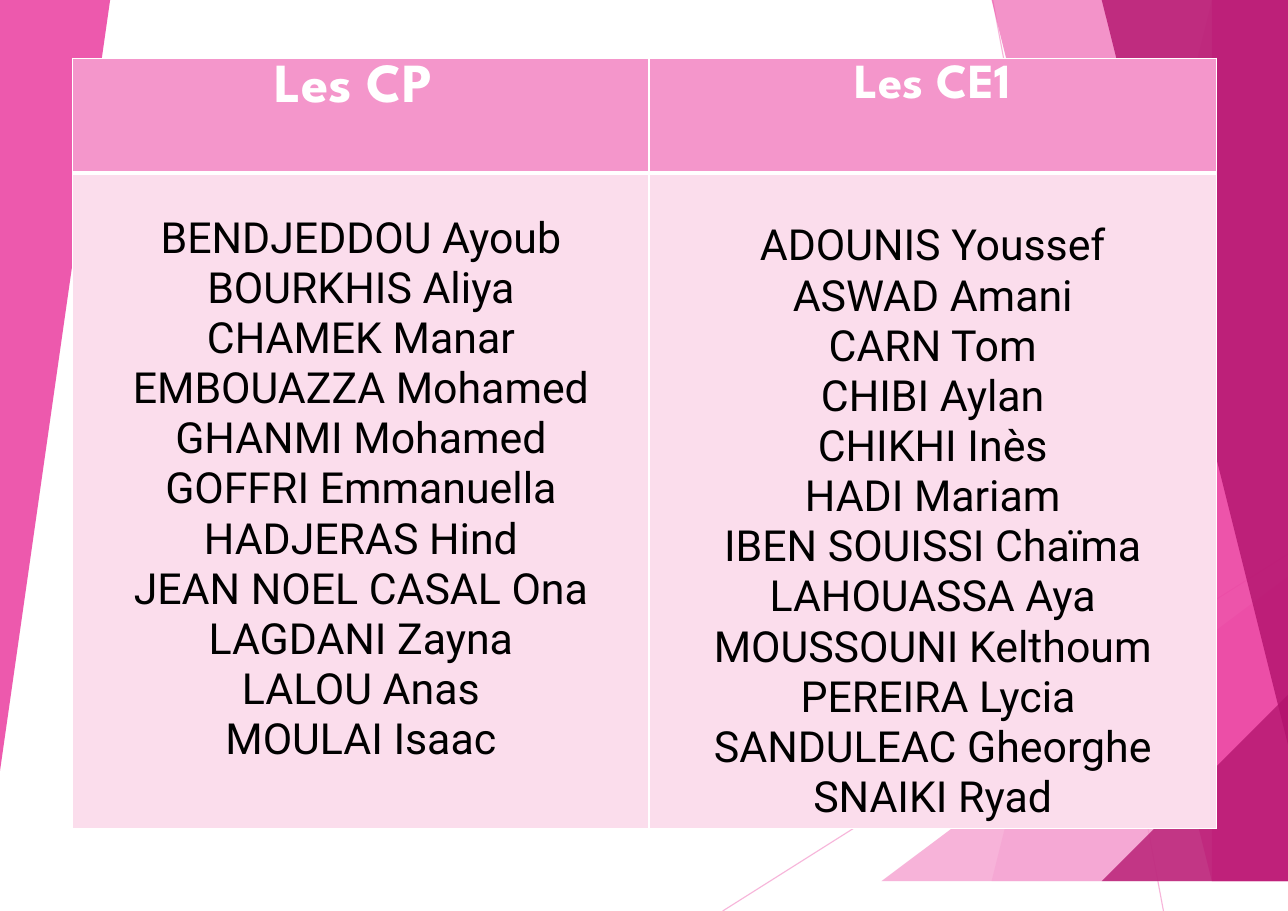
from lxml import etree
from pptx import Presentation
from pptx.dml.color import RGBColor
from pptx.enum.shapes import MSO_CONNECTOR
from pptx.enum.text import PP_ALIGN
from pptx.oxml.ns import qn
from pptx.util import Inches, Pt

STRAIGHT = MSO_CONNECTOR.STRAIGHT
CENTER = PP_ALIGN.CENTER

WIDTH, HEIGHT = 11.69, 8.27
COLORS = {
    "light": "F496CB", "pink": "EB3D9F", "dark": "B2136D",
    "pale": "FBDDEC", "white": "FFFFFF", "black": "000000",
}

# Facets of the right side: top x, top y, bottom x, colour, opacity in percent
FACETS = [
    (4.84, 0, 2.25, "light", 36),
    (2.65, 0, 4.19, "light", 20),
    (5.13, 4.73, 1.93, "light", 72),
    (2.40, 0, 4.78, "pink", 50),
    (4.91, 0, 4.05, "pink", 66),
    (3.79, 0, 4.99, "dark", 80),
    (5.13, 5.90, 3.76, "dark", 76),
]
RAYS = [(0, 8.27, 5.13, 5.03), (2.45, 0, 4, 8.27)]

# Classes: title, title size, space above the names, names
CLASSES = [
    ("Les CP ", 36, 0.37, [
        "BENDJEDDOU Ayoub", "BOURKHIS Aliya", "CHAMEK Manar",
        "EMBOUAZZA Mohamed", "GHANMI Mohamed", "GOFFRI Emmanuella",
        "HADJERAS Hind", "JEAN NOEL CASAL Ona", "LAGDANI Zayna",
        "LALOU Anas", "MOULAI Isaac"]),
    ("Les CE1", 32, 0.44, [
        "ADOUNIS Youssef", "ASWAD Amani", "CARN Tom", "CHIBI Aylan",
        "CHIKHI Inès", "HADI Mariam", "IBEN SOUISSI Chaïma",
        "LAHOUASSA Aya", "MOUSSOUNI Kelthoum", " PEREIRA Lycia",
        "SANDULEAC Gheorghe", "SNAIKI Ryad"]),
]
COLUMN_WIDTHS = [5.23, 5.15]
HEADER_HEIGHT = 1.04


def rgb(name):
    return RGBColor.from_string(COLORS[name])


def set_opacity(fill_parent, percent):
    color = fill_parent.find(".//" + qn("a:srgbClr"))
    etree.SubElement(color, qn("a:alpha"), val=str(percent * 1000))


def add_facet(slide, box, points, color, opacity):
    x, y = box[:2]
    points = [(x + px, y + py) for px, py in points]
    builder = slide.shapes.build_freeform(*points[0], scale=Inches(1))
    builder.add_line_segments(points[1:], close=True)
    sp = builder.convert_to_shape()
    sp.shadow.inherit = False
    sp.line.fill.background()
    sp.fill.solid()
    sp.fill.fore_color.rgb = rgb(color)
    set_opacity(sp._element.spPr, opacity)


def add_right_facets(slide, box):
    x, y, w, h = box
    for x1, y1, x2, y2 in RAYS:
        ray = slide.shapes.add_connector(
            STRAIGHT, Inches(x + x1), Inches(y + y1), Inches(x + x2), Inches(y + y2))
        ray.line.color.rgb = rgb("light")
        ray.line.width = Pt(0.75)
        set_opacity(ray.line._ln, 70)
        etree.SubElement(ray._element.spPr, qn("a:effectLst"))
    for top_x, top_y, bottom_x, color, opacity in FACETS:
        points = [(top_x, top_y), (bottom_x, h), (w, h), (w, top_y)]
        add_facet(slide, box, points, color, opacity)


def add_left_facet(slide, box):
    w, h = box[2:]
    add_facet(slide, box, [(0, 0), (w, 0), (0, h)], "pink", 85)


def set_borders(cell, widths):
    tc_pr = cell._tc.get_or_add_tcPr()
    for i, (side, width) in enumerate(widths.items()):
        ln = etree.Element(qn("a:" + side), w=str(Pt(width)))
        fill = etree.SubElement(ln, qn("a:solidFill"))
        etree.SubElement(fill, qn("a:srgbClr"), val=COLORS["white"])
        tc_pr.insert(i, ln)


def fill_cell(cell, lines, fill, color, font, bottom_border=1):
    cell.fill.solid()
    cell.fill.fore_color.rgb = rgb(fill)
    set_borders(cell, {"lnL": 1, "lnR": 1, "lnT": 1, "lnB": bottom_border})
    tf = cell.text_frame
    for i, line in enumerate(lines):
        p = tf.add_paragraph() if i else tf.paragraphs[0]
        p.alignment = CENTER
        r = p.add_run()
        r.text = line
        r.font.color.rgb = rgb(color)
        for name, value in font.items():
            setattr(r.font, name, value)


def add_class_table(slide, box):
    h = box[3]
    table = slide.shapes.add_table(2, len(CLASSES), *map(Inches, box)).table
    for row, height in zip(table.rows, (HEADER_HEIGHT, h - HEADER_HEIGHT)):
        row.height = Inches(height)
    for col, (title, size, top, names) in enumerate(CLASSES):
        table.columns[col].width = Inches(COLUMN_WIDTHS[col])
        title_font = {"name": "League Spartan", "size": Pt(size), "bold": True}
        fill_cell(table.cell(0, col), [title], "light", "white", title_font, 3)
        body = table.cell(1, col)
        body.margin_top = Inches(top)
        name_font = {"name": "Roboto", "size": Pt(28), "bold": False}
        fill_cell(body, names, "pale", "black", name_font)
    # The thick rule under the header belongs to both rows
    for col in range(len(CLASSES)):
        table.cell(1, col)._tc.tcPr.find(qn("a:lnT")).set("w", str(Pt(3)))


def main():
    prs = Presentation()
    prs.slide_width, prs.slide_height = Inches(WIDTH), Inches(HEIGHT)
    slide = prs.slides.add_slide(prs.slide_layouts[6])
    add_right_facets(slide, (6.56, 0, WIDTH - 6.56, HEIGHT))
    add_left_facet(slide, (0, 0, 1.09, 6.8))
    add_class_table(slide, (0.66, 0.53, sum(COLUMN_WIDTHS), 6.99))
    prs.save("out.pptx")


if __name__ == "__main__":
    main()
